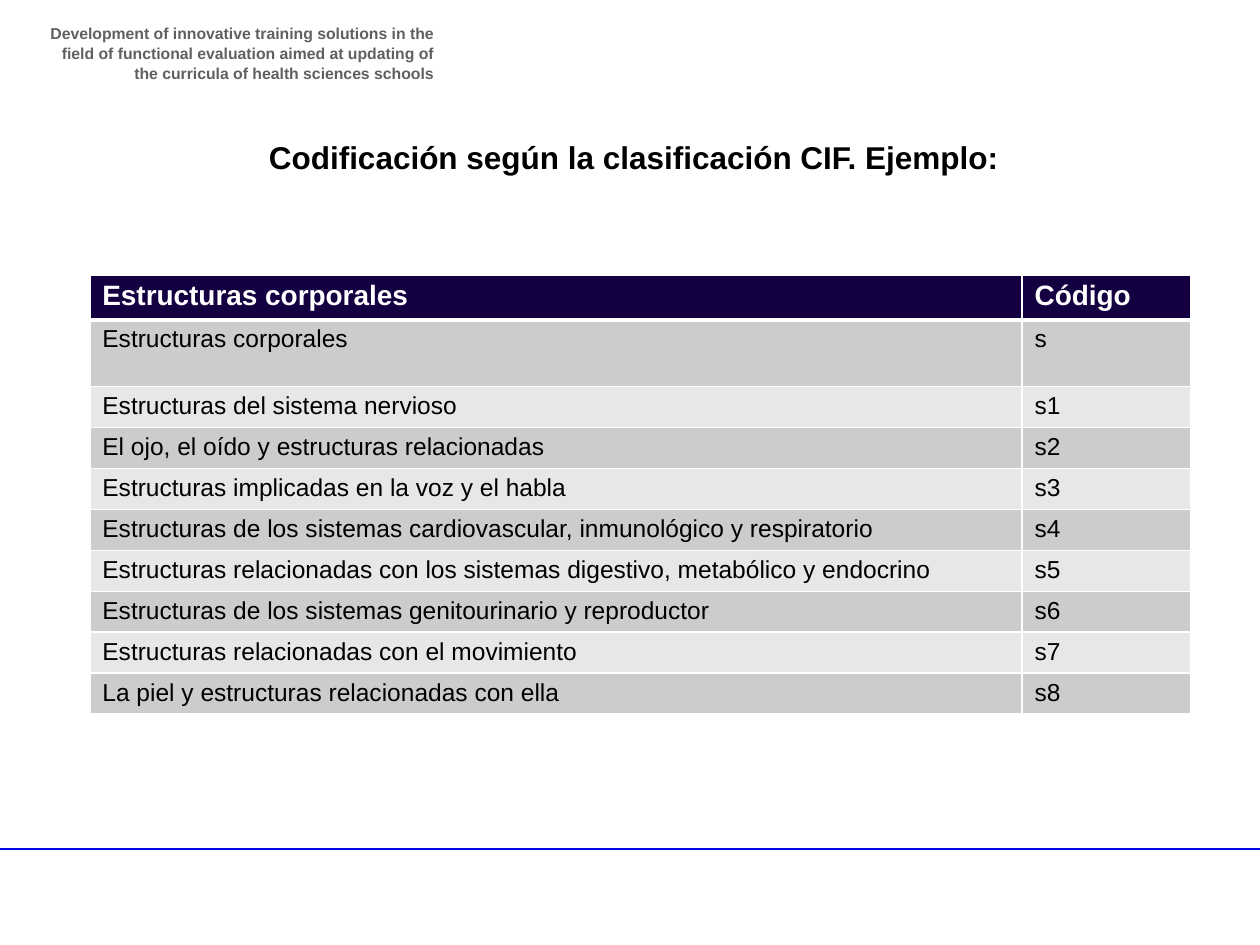
from lxml import etree
from pptx import Presentation
from pptx.dml.color import RGBColor
from pptx.enum.shapes import MSO_CONNECTOR
from pptx.enum.text import PP_ALIGN
from pptx.oxml.ns import qn
from pptx.util import Pt

STRAIGHT = MSO_CONNECTOR.STRAIGHT
CENTER, RIGHT = PP_ALIGN.CENTER, PP_ALIGN.RIGHT

PROJECT = ("Development of innovative training solutions in the ﬁeld of functional "
           "evaluation aimed at updating of the curricula of health sciences schools")
TITLE = "Codificación según la clasificación CIF. Ejemplo:"
ROWS = [
    ("Estructuras corporales", "Código"),
    ("Estructuras corporales", "s"),
    ("Estructuras del sistema nervioso", "s1"),
    ("El ojo, el oído y estructuras relacionadas", "s2"),
    ("Estructuras implicadas en la voz y el habla", "s3"),
    ("Estructuras de los sistemas cardiovascular, inmunológico y respiratorio", "s4"),
    ("Estructuras relacionadas con los sistemas digestivo, metabólico y endocrino", "s5"),
    ("Estructuras de los sistemas genitourinario y reproductor", "s6"),
    ("Estructuras relacionadas con el movimiento", "s7"),
    ("La piel y estructuras relacionadas con ella", "s8"),
]
COL_WIDTHS = [532.8, 96.5]
ROW_HEIGHTS = [25, 38] + [23.1] * 8
HEADER_FILL, BANDS = "140041", ("E7E7E9", "CCCCCF")


def rgb(hex_color):
    return RGBColor.from_string(hex_color)


def style(p, size, color, bold=False, align=None):
    p.font.name, p.font.size, p.font.bold = "Arial", Pt(size), bold
    p.font.color.rgb = rgb(color)
    if align is not None:
        p.alignment = align


def add_text(s, box, text, size, color, align, top_inset=3.6):
    tf = s.shapes.add_textbox(*map(Pt, box)).text_frame
    tf.word_wrap = True
    tf.margin_top = Pt(top_inset)
    p = tf.paragraphs[0]
    p.text = text
    style(p, size, color, True, align)
    return p


def set_borders(cell, widths):
    """Draw white borders; widths maps a side letter (L, R, T, B) to points."""
    tc_pr = cell._tc.get_or_add_tcPr()
    for i, (side, width) in enumerate(widths.items()):
        ln = etree.Element(qn(f"a:ln{side}"), w=str(Pt(width)))
        fill = etree.SubElement(ln, qn("a:solidFill"))
        etree.SubElement(fill, qn("a:srgbClr"), val="FFFFFF")
        tc_pr.insert(i, ln)


def add_codes_table(s, left, top):
    table = s.shapes.add_table(len(ROWS), len(COL_WIDTHS), Pt(left), Pt(top),
                               Pt(sum(COL_WIDTHS)), Pt(sum(ROW_HEIGHTS))).table
    for col, width in zip(table.columns, COL_WIDTHS):
        col.width = Pt(width)
    for i, (texts, height) in enumerate(zip(ROWS, ROW_HEIGHTS)):
        table.rows[i].height = Pt(height)
        header = i == 0
        for cell, text in zip(table.rows[i].cells, texts):
            cell.margin_top = cell.margin_bottom = Pt(3.3)
            cell.fill.solid()
            cell.fill.fore_color.rgb = rgb(HEADER_FILL if header else BANDS[i % 2])
            set_borders(cell, {"L": 1, "R": 1, "T": 3 if i == 1 else 1,
                               "B": 3 if header else 1})
            p = cell.text_frame.paragraphs[0]
            p.text = text
            style(p, 16 if header else 14, "FFFFFF" if header else "000000", header)


def main():
    prs = Presentation()
    prs.slide_width, prs.slide_height = Pt(720), Pt(540)
    s = prs.slides.add_slide(prs.slide_layouts[6])

    rule = s.shapes.add_connector(STRAIGHT, Pt(-3.6), Pt(485.3), Pt(720), Pt(485.3))
    rule.line.color.rgb = rgb("0404E6")
    rule.line.width = Pt(1)
    etree.SubElement(rule._element.spPr, qn("a:effectLst"))

    project = add_text(s, (20.2, 9.4, 234.7, 33.8), PROJECT, 9, "606060", RIGHT)
    project.line_spacing = 1.05
    add_text(s, (22, 71.3, 680.4, 41), TITLE, 18, "000000", CENTER, top_inset=7.8)
    add_codes_table(s, 51.3, 157)
    prs.save("out.pptx")


if __name__ == "__main__":
    main()
